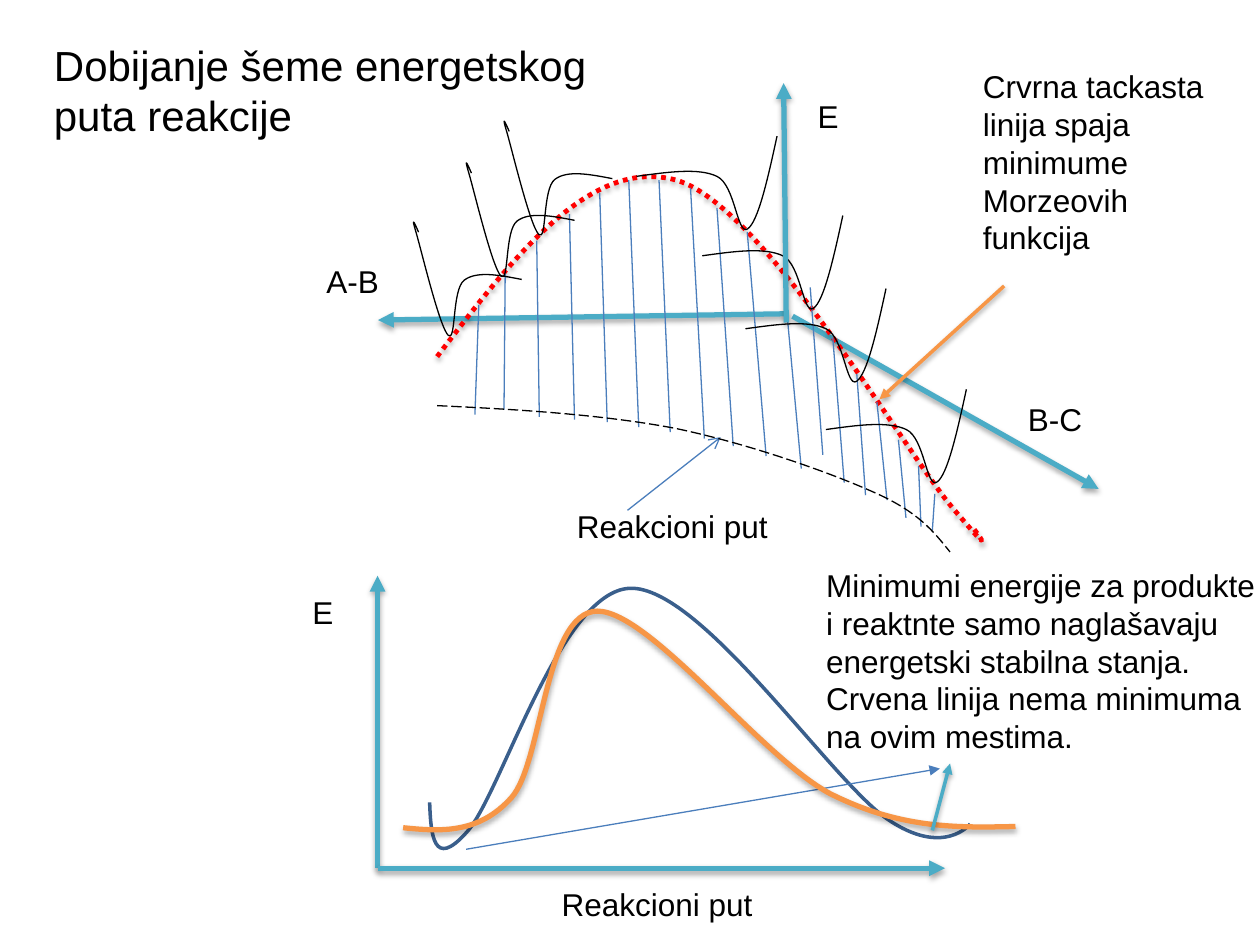
from lxml.etree import Element, SubElement
from pptx import Presentation
from pptx.dml.color import RGBColor
from pptx.enum.dml import MSO_LINE
from pptx.enum.shapes import MSO_CONNECTOR
from pptx.enum.text import MSO_ANCHOR, MSO_AUTO_SIZE, PP_ALIGN
from pptx.oxml.ns import qn
from pptx.util import Pt

COLORS = {
    "text": "000000", "axis": "4BACC6", "thin": "4B7EBC", "minima": "FF0000",
    "curve": "000000", "energy": "3A5F8C", "orange": "F79646",
}
FONT = "Arial"

# Each curve lists a start point, then two control points and an end point
# for every cubic segment.
MORSE_RIGHT = [(0, 23), (18, 20.5), (35.5, 18), (46, 23), (56.5, 28),
               (57.5, 57), (63.5, 53), (69.5, 49), (75, 24.5), (80.3, 0)]
MORSE_LEFT = [(61.9, 33), (49, 30.5), (36, 28), (29, 33.5), (22, 39),
              (24.5, 69), (20, 65), (15, 60.5), (4.5, 16), (1.5, 6),
              (-1.5, -4), (0.7, 0.7), (3, 6)]
RIGHT_ORIGINS = [(471.9, 222.5), (426, 164.9), (401.3, 123.2), (363.7, 77.8)]
LEFT_ORIGINS = [(288, 69.1), (266.4, 92.9), (236.2, 126.7)]

MINIMA_PATH = [(249.8, 203.8), (293.8, 146.2), (337.7, 89.3), (386.6, 103),
               (436.3, 117.4), (516.2, 257), (544.3, 290.2),
               (572.4, 323.3), (556.6, 302.4), (556.6, 302.4)]
REACTION_PATH = [(249.8, 231.8), (296.6, 234), (344.2, 236.9), (385.9, 244.8),
                 (427, 253.4), (472.3, 269.3), (498.2, 280.8),
                 (524.9, 292.3), (533.5, 303.8), (542.9, 315.4)]
ENERGY_WITH_MINIMA = [(245.5, 458.6), (246.2, 477.4), (247.7, 496.8),
                      (266.4, 475.9), (285.8, 455.8), (319.7, 337.7),
                      (360, 336.2), (400.3, 334.8), (474.5, 445.7),
                      (506.9, 468), (539.3, 490.3), (554.4, 470.9),
                      (554.4, 470.9)]
ENERGY_PLAIN = [(230.4, 473), (252, 475.2), (273.6, 476.6), (292.3, 455.8),
                (310.3, 435.6), (311, 349.9), (341.3, 349.2), (371.5, 349.2),
                (434.9, 432.7), (474.5, 453.6), (514.8, 473.8),
                (547.2, 473), (580.3, 472.3)]

# Start x, y and end x, y of each hatch line
HATCHING = [
    (273.6, 174.2, 271.4, 236.9), (288.7, 156.2, 288, 234),
    (308.2, 238.3, 306.7, 137.5), (328.3, 239.8, 325.4, 122.4),
    (347, 241.2, 342.7, 110.2), (365, 244.1, 359.3, 103),
    (383, 247, 376.6, 103), (402.5, 250.6, 394.6, 107.3),
    (419, 254.9, 409.7, 118.8), (437.8, 260.6, 427, 132.5),
    (457.9, 267.8, 447.8, 158.4), (470.2, 259.9, 463, 164.2),
    (482.4, 275.8, 475.9, 193), (494.6, 283, 489.6, 213.8),
    (506.9, 285.8, 501.1, 229.7), (517.7, 295.9, 513.4, 251.3),
    (526.3, 301, 524.9, 266.4), (532.8, 303.1, 534.2, 282.2),
]

LABELS = [
    ("Reakcioni put", 322.6, 286.2, 285.1, 28.8),
    ("E", 460.1, 51.8, 69.8, 28.8),
    ("A-B", 179.5, 146.2, 74.2, 28.8),
    ("B-C", 580.3, 225, 57.6, 30.2),
    ("Reakcioni put", 313.9, 502.2, 259.9, 28.8),
    ("E", 171.4, 335.2, 64.8, 28.8),
    ("Crvrna tackasta linija spaja minimume Morzeovih funkcija",
     554.6, 34.9, 144.7, 116.6),
    ("Minimumi energije za produkte i reaktnte samo naglašavaju energetski "
     "stabilna stanja. Crvena linija nema minimuma na ovim mestima.",
     465, 319.9, 259.9, 116.6),
]


def set_effects(s, shadow):
    """Give the shape a soft downward shadow, or explicitly none."""
    spPr = s._element.spPr
    for old in spPr.findall(qn("a:effectLst")):
        spPr.remove(old)
    effects = SubElement(spPr, qn("a:effectLst"))
    if shadow:
        outer = SubElement(effects, qn("a:outerShdw"), blurRad=str(Pt(3.1)),
                           dist=str(Pt(1.8)), dir="5400000", rotWithShape="0")
        color = SubElement(outer, qn("a:srgbClr"), val="000000")
        SubElement(color, qn("a:alpha"), val="35000")


def style_line(s, color, width, shadow):
    s.line.color.rgb = RGBColor.from_string(COLORS[color])
    s.line.width = Pt(width)
    set_effects(s, shadow)


def add_line(shapes, start, end, color="thin", width=0.75, head=None,
             shadow=False):
    s = shapes.add_connector(MSO_CONNECTOR.STRAIGHT,
                             *[Pt(v) for v in (*start, *end)])
    style_line(s, color, width, shadow)
    if head:
        SubElement(s.line._get_or_add_ln(), qn("a:tailEnd"), type=head)


def add_axis(shapes, start, end):
    add_line(shapes, start, end, "axis", 3, "triangle", True)


def bend_segments(s, points):
    """Turn the straight segments of a freeform into cubic curves."""
    for i, segment in enumerate(list(s._element.iter(qn("a:lnTo")))):
        segment.tag = qn("a:cubicBezTo")
        for j, (x, y) in enumerate(points[3 * i + 1:3 * i + 3]):
            control = Element(qn("a:pt"), x=str(x - s.left), y=str(y - s.top))
            segment.insert(j, control)


def add_curve(shapes, controls, color="curve", width=0.75, dash=None,
              shadow=False, origin=(0, 0)):
    points = [(Pt(x + origin[0]), Pt(y + origin[1])) for x, y in controls]
    builder = shapes.build_freeform(*points[0])
    builder.add_line_segments(points[3::3], close=False)
    s = builder.convert_to_shape()
    bend_segments(s, points)
    s.fill.background()
    style_line(s, color, width, shadow)
    if dash:
        s.line.dash_style = dash


def write_text(tf, text, size):
    tf.word_wrap = True
    tf.vertical_anchor = MSO_ANCHOR.TOP
    p = tf.paragraphs[0]
    p.alignment = PP_ALIGN.LEFT
    r = p.add_run()
    r.text = text
    r.font.name = FONT
    r.font.size = Pt(size)
    r.font.color.rgb = RGBColor.from_string(COLORS["text"])


def add_label(shapes, text, *box):
    s = shapes.add_textbox(*[Pt(v) for v in box])
    write_text(s.text_frame, text, 18)


def place_title(title, text):
    title.left, title.top = Pt(23.6), Pt(18.7)
    title.width, title.height = Pt(334.8), Pt(65.5)
    title.text_frame.auto_size = MSO_AUTO_SIZE.NONE
    write_text(title.text_frame, text, 24)


def add_energy_surface(shapes):
    add_axis(shapes, (450, 179.3), (216, 182.9))
    add_axis(shapes, (452.9, 180.7), (627.8, 279.4))
    add_curve(shapes, MINIMA_PATH, "minima", 2.75, MSO_LINE.ROUND_DOT, True)
    for x1, y1, x2, y2 in HATCHING:
        add_line(shapes, (x1, y1), (x2, y2))
    for origin in RIGHT_ORIGINS:
        add_curve(shapes, MORSE_RIGHT, origin=origin)
    for origin in LEFT_ORIGINS:
        add_curve(shapes, MORSE_LEFT, origin=origin)
    add_curve(shapes, REACTION_PATH, dash=MSO_LINE.LONG_DASH)
    add_axis(shapes, (449.3, 184.3), (447.8, 47.5))


def add_energy_profile(shapes):
    corner = (215.8, 496.1)
    add_axis(shapes, corner, (215.8, 329))
    add_axis(shapes, corner, (540, 496.1))
    add_curve(shapes, ENERGY_WITH_MINIMA, "energy", 2)
    add_line(shapes, (266.4, 485.3), (537.1, 439.2), head="triangle")
    add_curve(shapes, ENERGY_PLAIN, "orange", 3, shadow=True)
    add_line(shapes, (532.8, 474.5), (542.9, 436.3), "axis", 2, "triangle", True)


def main():
    prs = Presentation()
    prs.slide_width, prs.slide_height = Pt(720), Pt(540)
    slide = prs.slides.add_slide(prs.slide_layouts[5])
    shapes = slide.shapes
    place_title(shapes.title, "Dobijanje šeme energetskog puta reakcije")
    add_line(shapes, (358.6, 291.6), (411.8, 249.8), head="arrow")
    add_energy_surface(shapes.add_group_shape().shapes)
    add_line(shapes, (573.8, 163.4), (502.6, 228.2), "orange", 2, "triangle", True)
    for label in LABELS:
        add_label(shapes, *label)
    add_energy_profile(shapes)
    prs.save("out.pptx")


if __name__ == "__main__":
    main()
